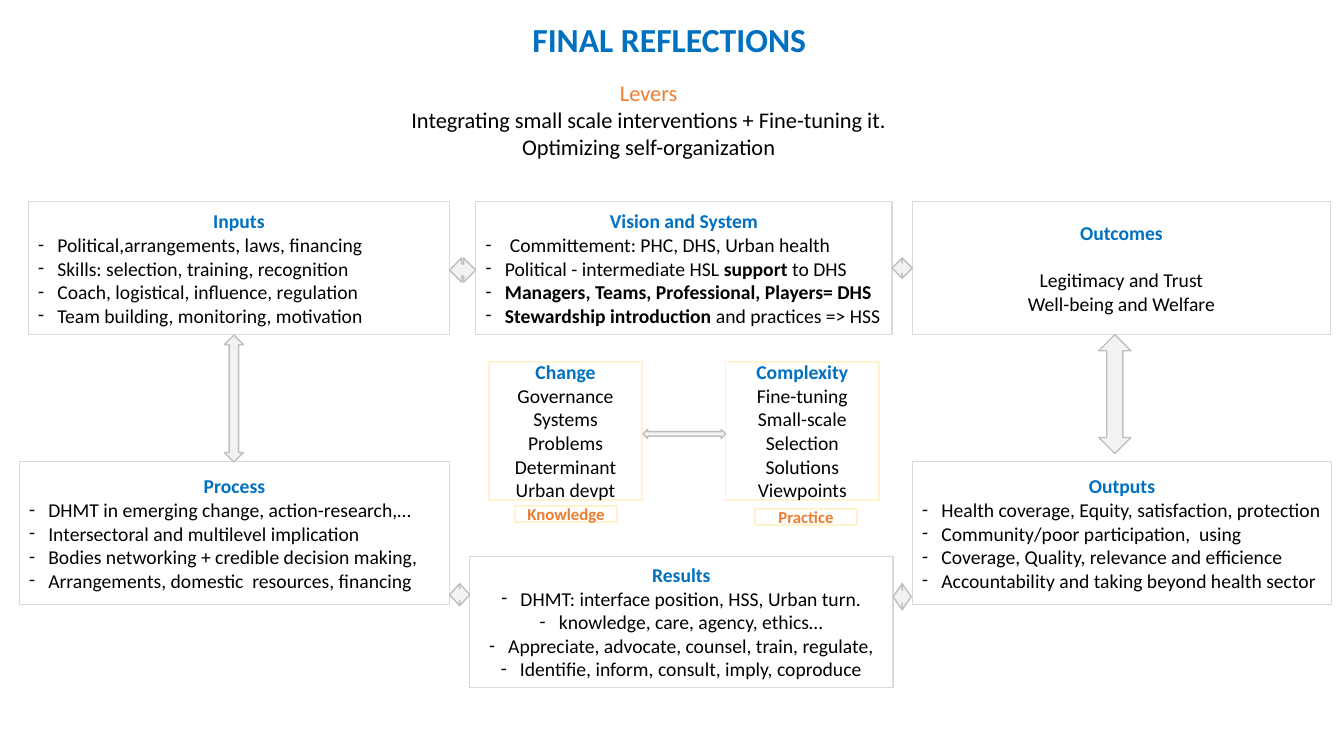
from dataclasses import dataclass

from lxml.etree import SubElement
from pptx import Presentation
from pptx.dml.color import RGBColor
from pptx.enum.shapes import MSO_SHAPE as Shape
from pptx.enum.text import MSO_ANCHOR as Anchor, PP_ALIGN as Align
from pptx.oxml.ns import qn
from pptx.util import Inches, Pt


@dataclass(frozen=True)
class Theme:
    font: str = "Calibri"
    heading: str = "0070C0"
    accent: str = "ED7D31"
    ink: str = "000000"
    paper: str = "FFFFFF"
    box_line: str = "D9D9D9"
    core_line: str = "FFF2CC"
    arrow_fill: str = "F2F2F2"
    arrow_line: str = "BFBFBF"
    title_size: int = 24
    lever_size: int = 16
    body_size: int = 14
    label_size: int = 12


class ReflectionSlide:
    """Places elements by (left, top, width, height) in percent of the slide."""

    def __init__(self, deck, theme):
        self.deck, self.theme = deck, theme
        self.slide = deck.slides.add_slide(deck.slide_layouts[5])

    def place(self, area):
        sides = (self.deck.slide_width, self.deck.slide_height) * 2
        return [round(side * share / 100) for side, share in zip(sides, area)]

    def shape(self, kind, area, fill, line=None):
        item = self.slide.shapes.add_shape(kind, *self.place(area))
        item.shadow.inherit = False
        item.fill.solid()
        item.fill.fore_color.rgb = RGBColor.from_string(fill)
        if line:
            item.line.color.rgb = RGBColor.from_string(line)
            item.line.width = Pt(1)
        else:
            item.line.fill.background()
        return item

    def set_text(self, paragraph, text, size, color, bold=False, align=Align.CENTER,
                 hang=None, before=0):
        """Fill a paragraph; ** toggles bold, hang is the dash indent in inches."""
        if hang:
            props = paragraph._p.get_or_add_pPr()
            props.set("marL", str(Inches(hang)))
            props.set("indent", str(-Inches(hang)))
            SubElement(props, qn("a:buFont")).set("typeface", self.theme.font)
            SubElement(props, qn("a:buChar")).set("char", "-")
        paragraph.alignment = align
        if before:
            paragraph.space_before = Pt(before)
        font = paragraph.font
        font.name, font.size, font.bold = self.theme.font, Pt(size), bold
        font.color.rgb = RGBColor.from_string(color)
        for index, part in enumerate(text.split("**")):
            if part:
                run = paragraph.add_run()
                run.text = part
                if index % 2:
                    run.font.bold = True

    def title(self, text, area):
        heading = self.slide.shapes.title
        heading.left, heading.top, heading.width, heading.height = self.place(area)
        frame = heading.text_frame
        frame.vertical_anchor = Anchor.MIDDLE
        line = frame.paragraphs[0]
        line.line_spacing = 0.9
        self.set_text(line, text, self.theme.title_size, self.theme.heading, bold=True)

    def panel(self, area, heading, lines=(), line=None, size=None, color=None,
              bold=True, align=Align.CENTER, hangs=(), gap=0):
        """A box with a heading over its lines; gap is the space between them."""
        theme = self.theme
        size = size or theme.body_size
        frame = self.shape(Shape.RECTANGLE, area, theme.paper, line).text_frame
        frame.word_wrap = True
        frame.vertical_anchor = Anchor.MIDDLE
        self.set_text(frame.paragraphs[0], heading, size, color or theme.heading, bold)
        for index, text in enumerate(lines):
            self.set_text(frame.add_paragraph(), text, size, theme.ink, align=align,
                          hang=hangs[index] if hangs else None,
                          before=0 if index else gap)

    def arrow(self, kind, area):
        self.shape(kind, area, self.theme.arrow_fill, self.theme.arrow_line)


HANG = 0.19
DASHES = (HANG,) * 4
UPPER, LOWER = (26.67, 17.6), (61.07, 18.93)


def row_area(left, width, row):
    top, height = row
    return left, top, width, height


def build():
    deck = Presentation()
    deck.slide_width, deck.slide_height = Inches(13.33), Inches(7.5)
    theme = Theme()
    page = ReflectionSlide(deck, theme)

    page.title("FINAL REFLECTIONS", (4.35, 1.2, 90.9, 8.53))
    page.panel((28.65, 10.27, 39.23, 11.07), "Levers",
               ["Integrating small scale interventions + Fine-tuning it.",
                "Optimizing self-organization"],
               size=theme.lever_size, color=theme.accent, bold=False)

    dashed_panels = [
        (row_area(35.4, 30.98, UPPER), "Vision and System", Align.LEFT,
         (0.24,) + DASHES[1:],
         ["Committement: PHC, DHS, Urban health",
          "Political - intermediate HSL **support** to DHS",
          "**Managers, Teams, Professional, Players= DHS**",
          "**Stewardship introduction **and practices => HSS"]),
        (row_area(2.1, 31.35, UPPER), "Inputs", Align.LEFT, DASHES,
         ["Political,arrangements, laws, financing",
          "Skills: selection, training, recognition",
          "Coach, logistical, influence, regulation",
          "Team building, monitoring, motivation"]),
        (row_area(67.88, 31.2, LOWER), "Outputs", Align.LEFT, DASHES,
         ["Health coverage, Equity, satisfaction, protection",
          "Community/poor participation,  using",
          "Coverage, Quality, relevance and efficience",
          "Accountability and taking beyond health sector"]),
        (row_area(1.43, 32.03, LOWER), "Process", Align.LEFT, DASHES,
         ["DHMT in emerging change, action-research,…",
          "Intersectoral and multilevel implication",
          "Bodies networking + credible decision making,",
          "Arrangements, domestic  resources, financing"]),
        ((34.95, 73.6, 31.5, 17.33), "Results", Align.CENTER, DASHES,
         ["DHMT: interface position, HSS, Urban turn.",
          "knowledge, care, agency, ethics…",
          "Appreciate, advocate, counsel, train, regulate,",
          "Identifie, inform, consult, imply, coproduce"]),
    ]
    for area, heading, align, hangs, lines in dashed_panels:
        page.panel(area, heading, lines, theme.box_line, align=align, hangs=hangs)
    page.panel(row_area(67.88, 31.13, UPPER), "Outcomes",
               ["Legitimacy and Trust", "Well-being and Welfare"],
               theme.box_line, gap=17)

    core_panels = [
        (36.38, "Change",
         ["Governance", "Systems", "Problems", "Determinant", "Urban devpt"],
         "Knowledge", (38.33, 66.93)),
        (54, "Complexity",
         ["Fine-tuning", "Small-scale", "Selection", "Solutions", "Viewpoints"],
         "Practice", (56.18, 67.33)),
    ]
    for left, heading, lines, label, corner in core_panels:
        page.panel((left, 47.87, 11.4, 18.27), heading, lines, theme.core_line)
        page.panel((*corner, 7.58, 2.13), label, line=theme.core_line,
                   size=theme.label_size, color=theme.accent)

    for area in [(33.45, 34.13, 1.95, 3.2), (66.38, 34.13, 1.5, 2.67),
                 (33.45, 77.2, 1.5, 2.93), (66.45, 77.2, 1.35, 3.47),
                 (47.85, 56.8, 6.15, 1.2)]:
        page.arrow(Shape.LEFT_RIGHT_ARROW, area)
    for area in [(16.69, 44.33, 1.43, 16.8), (81.75, 44.27, 2.4, 15.73)]:
        page.arrow(Shape.UP_DOWN_ARROW, area)

    deck.save("out.pptx")


if __name__ == "__main__":
    build()
